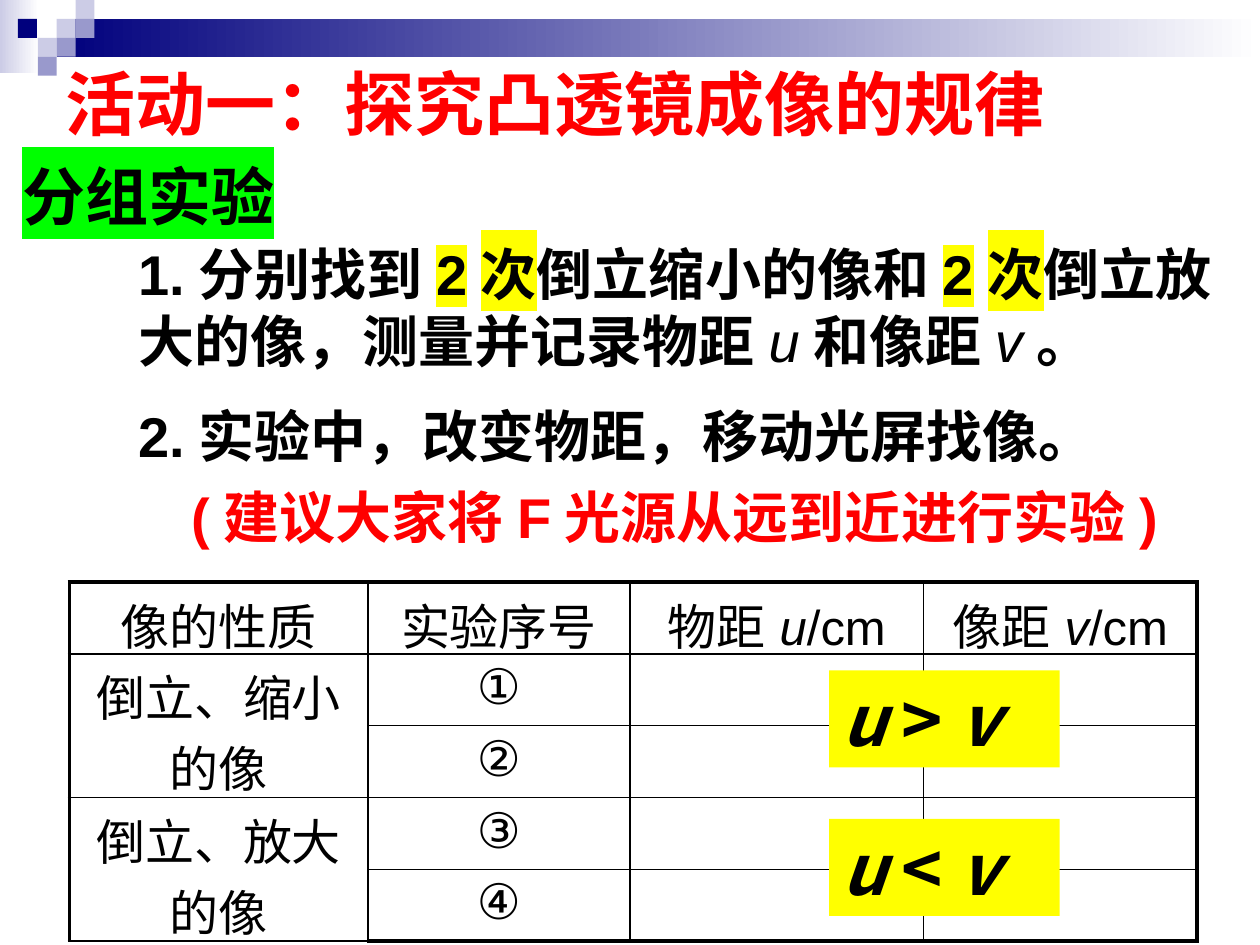
from pptx import Presentation
from pptx.dml.color import RGBColor
from pptx.enum.shapes import MSO_SHAPE
from pptx.enum.text import MSO_ANCHOR, PP_ALIGN
from pptx.oxml import parse_xml
from pptx.oxml.ns import nsdecls
from pptx.util import Inches, Pt

NAVY, LILAC, PALE, WHITE = "00007D", "9999CC", "CCCCE6", "FFFFFF"
BLACK, RED, GREEN, YELLOW = "000000", "FF0000", "00FF00", "FFFF00"


def color(value):
    return RGBColor.from_string(value)


class SlideBuilder:
    def __init__(self, slide, font="Arial"):
        self.slide = slide
        self.font = font

    def rectangle(self, left, top, width, height, fill, fade_to=None):
        shape = self.slide.shapes.add_shape(
            MSO_SHAPE.RECTANGLE, *map(Inches, (left, top, width, height)))
        shape.shadow.inherit = False
        shape.line.fill.background()
        if fade_to:
            shape.fill.gradient()
            shape.fill.gradient_angle = 0
            for stop, value in zip(shape.fill.gradient_stops, (fill, fade_to)):
                stop.color.rgb = color(value)
        else:
            shape.fill.solid()
            shape.fill.fore_color.rgb = color(fill)
        return shape

    def span(self, para, text, size, ink=BLACK, bold=False, italic=False,
             highlight=None, font=None):
        run = para.add_run()
        run.text = text
        run.font.size = Pt(size)
        run.font.bold = bold
        run.font.italic = italic
        run.font.color.rgb = color(ink)
        run.font.name = font or self.font
        if highlight:
            fill = run.font._element.find(
                "{http://schemas.openxmlformats.org/drawingml/2006/main}solidFill")
            fill.addnext(parse_xml(
                f'<a:highlight {nsdecls("a")}><a:srgbClr val="{highlight}"/></a:highlight>'))

    def text(self, left, top, width, height, paragraphs, size, ink=BLACK,
             anchor=MSO_ANCHOR.TOP, gap=0):
        """Add a text box; each paragraph is a list of (text, span options)."""
        box = self.slide.shapes.add_textbox(*map(Inches, (left, top, width, height)))
        frame = box.text_frame
        frame.word_wrap = True
        frame.vertical_anchor = anchor
        for index, spans in enumerate(paragraphs):
            para = frame.paragraphs[0] if index == 0 else frame.add_paragraph()
            if index:
                para.space_before = Pt(gap)
            for text, options in spans:
                self.span(para, text, size, ink, **options)

    def relation(self, left, top, sign):
        """Add a yellow label comparing u with v."""
        frame = self.rectangle(left, top, 1.83, 0.77, YELLOW).text_frame
        frame.vertical_anchor = MSO_ANCHOR.TOP
        para = frame.paragraphs[0]
        para.alignment = PP_ALIGN.LEFT
        for text, italic in (("u ", True), (f"{sign} ", False), ("v", True)):
            self.span(para, text, 40, bold=True, italic=italic, font="Noto Sans CJK SC")

    def border(self, cell, side, width):
        cell._tc.get_or_add_tcPr().append(parse_xml(
            f'<a:ln{side} {nsdecls("a")} w="{Pt(width)}"><a:solidFill>'
            f'<a:srgbClr val="{BLACK}"/></a:solidFill></a:ln{side}>'))

    def table(self, left, top, widths, row_height, rows, merges):
        """Add a ruled table with a heavy outline; cells are lists of (text, italic)."""
        last_row, last_column = len(rows) - 1, len(widths) - 1
        table = self.slide.shapes.add_table(
            len(rows), len(widths), Inches(left), Inches(top),
            Inches(sum(widths)), Inches(row_height * len(rows))).table
        table.first_row = table.horz_banding = False
        for column, width in zip(table.columns, widths):
            column.width = Inches(width)
        for r, row in enumerate(rows):
            table.rows[r].height = Inches(row_height)
            for c, spans in enumerate(row):
                cell = table.cell(r, c)
                outer = {"L": c == 0, "R": c == last_column,
                         "T": r == 0, "B": r == last_row}
                for side, heavy in outer.items():
                    self.border(cell, side, 2.25 if heavy else 1)
                cell.fill.background()
                para = cell.text_frame.paragraphs[0]
                para.alignment = PP_ALIGN.CENTER
                for text, italic in spans:
                    self.span(para, text, 28, italic=italic)
        for first, last in merges:
            table.cell(*first).merge(table.cell(*last))


def main():
    deck = Presentation()
    deck.slide_width, deck.slide_height = Inches(10), Inches(7.5)
    page = SlideBuilder(deck.slides.add_slide(deck.slide_layouts[6]))

    page.rectangle(0, 0, 0.31, 0.58, PALE, fade_to=WHITE)
    page.rectangle(0.45, 0.15, 9.55, 0.3, NAVY, fade_to=WHITE)
    tile = 0.15
    for column, row, fill in ((3, 1, PALE), (4, 0, PALE), (4, 1, LILAC), (2, 2, PALE),
                              (0.95, 1, NAVY), (3, 2, LILAC), (2, 3, LILAC)):
        page.rectangle(column * tile, row * tile, tile, tile, fill)

    bold, italic = {"bold": True}, {"italic": True}
    marked = {"bold": True, "highlight": YELLOW}
    page.text(0.42, 0.42, 9.5, 0.78, [[("活动一：探究凸透镜成像的规律", bold)]],
              40, RED, MSO_ANCHOR.MIDDLE)
    page.text(0.08, 1.2, 2.92, 0.71,
              [[("分组实验", {"bold": True, "highlight": GREEN})]], 36)
    page.text(1, 1.85, 8.83, 1.99, [
        [("1.分别找到", bold), ("2次", marked), ("倒立缩小的像和", bold), ("2次", marked),
         ("倒立放大的像，测量并记录物距", bold), ("u", italic), ("和像距", bold),
         ("v", italic), ("。", bold)],
        [("2.实验中，改变物距，移动光屏找像。", bold)],
    ], 32, gap=16)

    header = [[("像的性质", False)], [("实验序号", False)],
              [("物距", False), ("u", True), ("/cm", False)],
              [("像距", False), ("v", True), ("/cm", False)]]
    kinds = ("倒立、缩小的像", "", "倒立、放大的像", "")
    rows = [[[(kind, False)] if kind else [], [(number, False)], [], []]
            for kind, number in zip(kinds, "①②③④")]
    page.table(0.55, 4.62, (2.37, 2.08, 2.33, 2.17), 0.57, [header] + rows,
               [((1, 0), (2, 0)), ((3, 0), (4, 0))])

    page.text(1.42, 3.78, 8.08, 0.64,
              [[("(建议大家将F光源从远到近进行实验)", bold)]], 32, RED)
    for top, sign in ((5.32, ">"), (6.5, "<")):
        page.relation(6.58, top, sign)

    deck.save("out.pptx")


if __name__ == "__main__":
    main()
